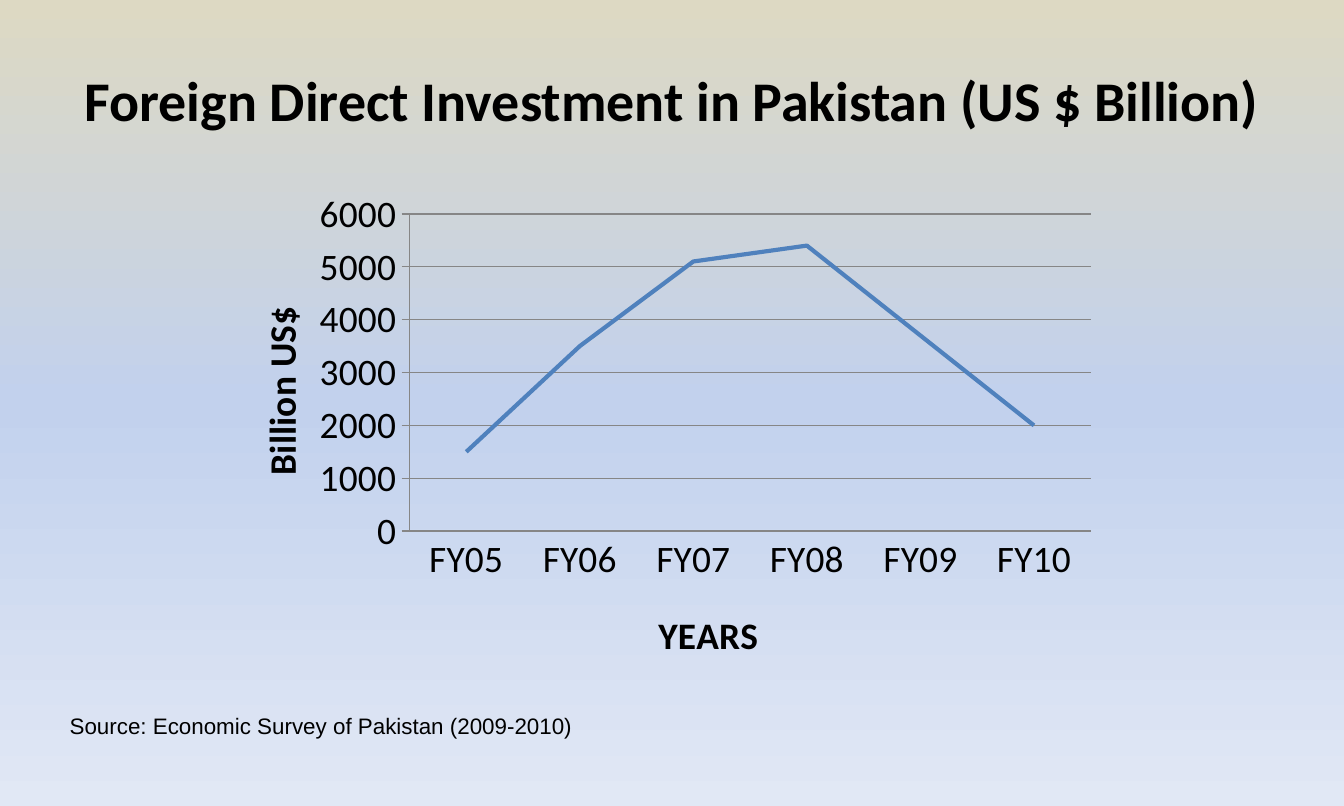
from copy import deepcopy

from lxml.etree import SubElement
from pptx import Presentation
from pptx.chart.data import CategoryChartData
from pptx.dml.color import RGBColor
from pptx.enum.chart import XL_CHART_TYPE, XL_TICK_MARK
from pptx.enum.text import MSO_ANCHOR, MSO_AUTO_SIZE, PP_ALIGN
from pptx.oxml.ns import qn
from pptx.util import Inches, Pt

BLACK = RGBColor(0x00, 0x00, 0x00)
BLUE = RGBColor(0x4F, 0x81, 0xBD)
GREY = RGBColor(0x86, 0x86, 0x86)
SAND = RGBColor(0xDD, 0xD9, 0xC3)
SKY = RGBColor(0xC2, 0xD1, 0xED)
MIST = RGBColor(0xE1, 0xE8, 0xF5)

YEARS = ("FY05", "FY06", "FY07", "FY08", "FY09", "FY10")
FLOWS = (1500, 3500, 5100, 5400, 3700, 2000)


class Deck:
    """Holds the style and the current slide, and adds each kind of element."""

    def __init__(self, width, height):
        self.file = Presentation()
        self.file.slide_width = Inches(width)
        self.file.slide_height = Inches(height)
        self.slide = self.file.slides.add_slide(self.file.slide_layouts[5])
        self.body = {"name": "Calibri", "size": Pt(20), "bold": False}
        self.label = {**self.body, "bold": True}
        self.head = {**self.label, "size": Pt(30)}
        self.note = {"name": "Arial", "size": Pt(12), "bold": False}

    def apply(self, item, style):
        for key, value in style.items():
            setattr(item, key, value)

    def paint(self, font, style):
        self.apply(font, style)
        font.color.rgb = BLACK

    def stroke(self, line, color, width):
        line.color.rgb = color
        line.width = Pt(width)

    def backdrop(self, colors):
        fill = self.slide.background.fill
        fill.gradient()
        fill.gradient_angle = 270
        first = self.slide.element.xpath(".//a:gs")[0]
        first.addnext(deepcopy(first))
        last = len(colors) - 1
        for i, (stop, color) in enumerate(zip(fill.gradient_stops, colors)):
            stop.position = i / last
            stop.color.rgb = color

    def letter(self, shape, text, style, align):
        frame = shape.text_frame
        frame.text = text
        frame.word_wrap = True
        para = frame.paragraphs[0]
        para.alignment = align
        self.paint(para.runs[0].font, style)
        return frame

    def title(self, text, left, top, width, height):
        shape = self.slide.shapes.title
        box = {"left": left, "top": top, "width": width, "height": height}
        self.apply(shape, {key: Inches(value) for key, value in box.items()})
        frame = self.letter(shape, text, self.head, PP_ALIGN.CENTER)
        frame.vertical_anchor = MSO_ANCHOR.MIDDLE

    def text(self, text, *box):
        shape = self.slide.shapes.add_textbox(*map(Inches, box))
        frame = self.letter(shape, text, self.note, PP_ALIGN.LEFT)
        frame.auto_size = MSO_AUTO_SIZE.SHAPE_TO_FIT_TEXT

    def place(self, owner, spots):
        for old in owner.findall(qn("c:layout")):
            owner.remove(old)
        layout = owner.makeelement(qn("c:layout"))
        manual = SubElement(layout, qn("c:manualLayout"))
        for key, value in spots.items():
            SubElement(manual, qn("c:" + key)).set("val", str(value))
        text = owner.find(qn("c:tx"))
        if text is None:
            owner.insert(0, layout)
        else:
            text.addnext(layout)

    def axis(self, axis, name, tick, x, y):
        self.apply(axis, {"major_tick_mark": tick,
                          "minor_tick_mark": XL_TICK_MARK.NONE})
        self.paint(axis.tick_labels.font, self.body)
        self.stroke(axis.format.line, GREY, 0.75)
        frame = axis.axis_title.text_frame
        frame.text = name
        self.paint(frame.paragraphs[0].runs[0].font, self.label)
        self.place(axis.axis_title._element,
                   {"xMode": "edge", "yMode": "edge", "x": x, "y": y})

    def chart(self, *box):
        data = CategoryChartData()
        data.categories = YEARS
        data.add_series("Series 1", FLOWS)
        chart = self.slide.shapes.add_chart(
            XL_CHART_TYPE.LINE, *map(Inches, box), data).chart
        self.apply(chart, {"has_legend": False, "has_title": False})
        self.paint(chart.font, self.body)
        plot = chart.plots[0]
        plot.vary_by_categories = False
        line = plot.series[0]
        line.smooth = False
        self.stroke(line.format.line, BLUE, 2.25)
        self.axis(chart.category_axis, "YEARS", XL_TICK_MARK.NONE, 0.49, 0.84)
        scale = chart.value_axis
        self.axis(scale, "Billion US$", XL_TICK_MARK.CROSS, 0.04, 0.24)
        self.apply(scale, {"minimum_scale": 0, "maximum_scale": 6000,
                           "major_unit": 1000, "has_major_gridlines": True})
        self.stroke(scale.major_gridlines.format.line, GREY, 0.75)
        area = chart.element.find(".//" + qn("c:plotArea"))
        self.place(area, {"layoutTarget": "inner", "xMode": "edge",
                          "yMode": "edge", "x": 0.22, "y": 0.07,
                          "w": 0.76, "h": 0.63})


def main():
    deck = Deck(10, 6)
    deck.backdrop((SAND, SKY, MIST))
    deck.title("Foreign Direct Investment in Pakistan (US $ Billion)",
               0.5, 0.24, 9, 1)
    deck.chart(1.58, 1.33, 6.67, 3.75)
    deck.text("Source: Economic Survey of Pakistan (2009-2010)",
              0.42, 5.25, 3.97, 0.3)
    deck.file.save("out.pptx")


if __name__ == "__main__":
    main()
